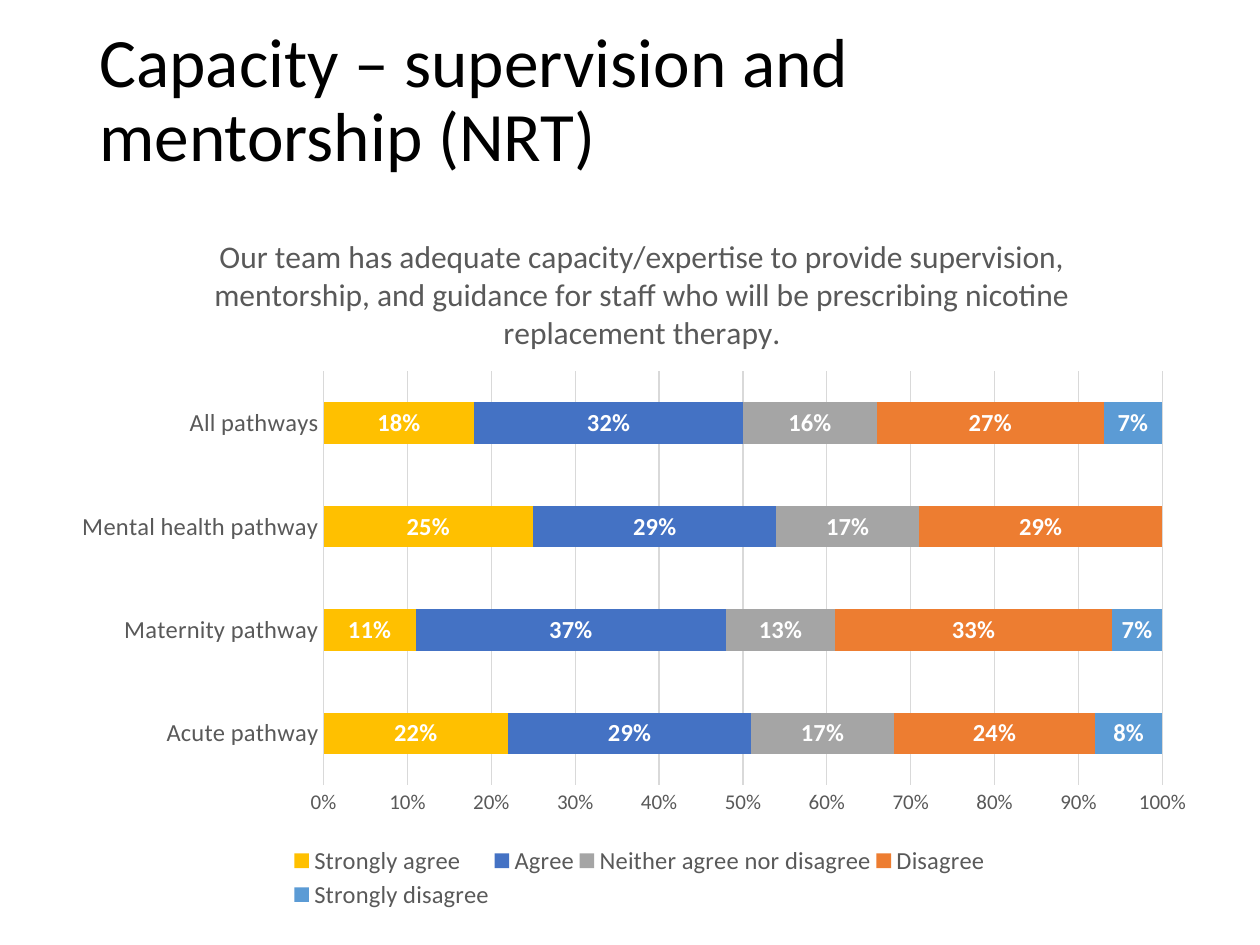
from lxml.etree import SubElement
from pptx import Presentation
from pptx.chart.data import CategoryChartData
from pptx.dml.color import RGBColor
from pptx.enum.chart import XL_CHART_TYPE, XL_LABEL_POSITION, XL_LEGEND_POSITION, XL_TICK_MARK
from pptx.enum.text import MSO_ANCHOR
from pptx.oxml.ns import qn
from pptx.util import Inches, Pt

FONT = "Calibri"
COLORS = {"black": "000000", "white": "FFFFFF", "text": "595959", "grid": "D9D9D9"}
HEADING = "Capacity – supervision and mentorship (NRT)"
QUESTION = ("Our team has adequate capacity/expertise to provide supervision, mentorship, "
            "and guidance for staff who will be prescribing nicotine replacement therapy.")
PATHWAYS = ["Acute pathway", "Maternity pathway", "Mental health pathway", "All pathways"]
ANSWERS = [
    ("Strongly agree", "FFC000", (0.22, 0.11, 0.25, 0.18)),
    ("Agree", "4472C4", (0.29, 0.37, 0.29, 0.32)),
    ("Neither agree nor disagree", "A5A5A5", (0.17, 0.13, 0.17, 0.16)),
    ("Disagree", "ED7D31", (0.24, 0.33, 0.29, 0.27)),
    ("Strongly disagree", "5B9BD5", (0.08, 0.07, 0, 0.07)),
]


def style_font(font, size, color, bold=False):
    font.name = FONT
    font.size = Pt(size)
    font.bold = bold
    font.color.rgb = RGBColor.from_string(COLORS[color])


def style_line(line, color):
    line.color.rgb = RGBColor.from_string(COLORS[color])
    line.width = Pt(0.75)


def set_layout(element, index, **fractions):
    """Place a chart part by fractions of the chart area."""
    for old in element.findall(qn("c:layout")):
        element.remove(old)
    layout = SubElement(element, qn("c:layout"))
    element.insert(index, layout)
    manual = SubElement(layout, qn("c:manualLayout"))
    if "inner" in fractions:
        SubElement(manual, qn("c:layoutTarget")).set("val", fractions.pop("inner"))
    for mode in ("xMode", "yMode"):
        SubElement(manual, qn(f"c:{mode}")).set("val", "edge")
    for key, value in fractions.items():
        SubElement(manual, qn(f"c:{key}")).set("val", str(value))


def hide_label(labels, index):
    label = SubElement(labels._element, qn("c:dLbl"))
    labels._element.insert(0, label)
    SubElement(label, qn("c:idx")).set("val", str(index))
    SubElement(label, qn("c:delete")).set("val", "1")


def add_heading(slide):
    heading = slide.shapes.add_textbox(Inches(0.69), Inches(0.4), Inches(8.66), Inches(0.82))
    frame = heading.text_frame
    frame.word_wrap = True
    frame.vertical_anchor = MSO_ANCHOR.MIDDLE
    frame.text = HEADING
    frame.paragraphs[0].line_spacing = 0.9
    style_font(frame.paragraphs[0].runs[0].font, 39.6, "black")


def style_series(series, color):
    series.format.fill.solid()
    series.format.fill.fore_color.rgb = RGBColor.from_string(color)
    labels = series.data_labels
    labels.show_value = True
    labels.number_format = "0%"
    labels.number_format_is_linked = False
    labels.position = XL_LABEL_POSITION.CENTER
    style_font(labels.font, 14, "white", bold=True)
    for index, value in enumerate(series.values):
        if not value:
            hide_label(labels, index)


def style_axes(chart):
    pathways, share = chart.category_axis, chart.value_axis
    for axis, size in ((pathways, 14), (share, 12)):
        axis.major_tick_mark = axis.minor_tick_mark = XL_TICK_MARK.NONE
        style_font(axis.tick_labels.font, size, "text")
    pathways.has_major_gridlines = False
    style_line(pathways.format.line, "grid")
    share.minimum_scale, share.maximum_scale, share.major_unit = 0, 1, 0.1
    share.has_major_gridlines = True
    style_line(share.major_gridlines.format.line, "grid")
    share.format.line.fill.background()
    share.tick_labels.number_format = "0%"
    share.tick_labels.number_format_is_linked = False


def add_answers_chart(slide):
    answers = CategoryChartData(number_format="0%")
    answers.categories = PATHWAYS
    for name, _, shares in ANSWERS:
        answers.add_series(name, shares)
    chart = slide.shapes.add_chart(XL_CHART_TYPE.BAR_STACKED, Inches(0.47), Inches(1.59),
                                   Inches(9.12), Inches(5.66), answers).chart
    style_font(chart.font, 10, "black")

    chart.has_title = True
    question = chart.chart_title.text_frame
    question.text = QUESTION
    style_font(question.paragraphs[0].runs[0].font, 18, "text")
    chart.chart_title.include_in_layout = False

    chart.has_legend = True
    chart.legend.position = XL_LEGEND_POSITION.BOTTOM
    chart.legend.include_in_layout = False
    style_font(chart.legend.font, 14, "text")

    bars = chart.plots[0]
    bars.gap_width, bars.overlap = 150, 100
    bars.vary_by_categories = False
    for series, (_, color, _) in zip(bars.series, ANSWERS):
        style_series(series, color)
    style_axes(chart)

    plot_area = chart._chartSpace.chart.plotArea
    set_layout(plot_area, 0, inner="inner", x=0.23, y=0.24, w=0.73, h=0.58)
    set_layout(chart.chart_title._element, 1, x=0.13, y=0.04)
    set_layout(chart.legend._element, 1, x=0.2, y=0.9, w=0.61, h=0.1)


def main():
    deck = Presentation()
    deck.slide_width, deck.slide_height = Inches(10), Inches(7.5)
    slide = deck.slides.add_slide(deck.slide_layouts[6])
    add_heading(slide)
    add_answers_chart(slide)
    deck.save("out.pptx")


if __name__ == "__main__":
    main()
